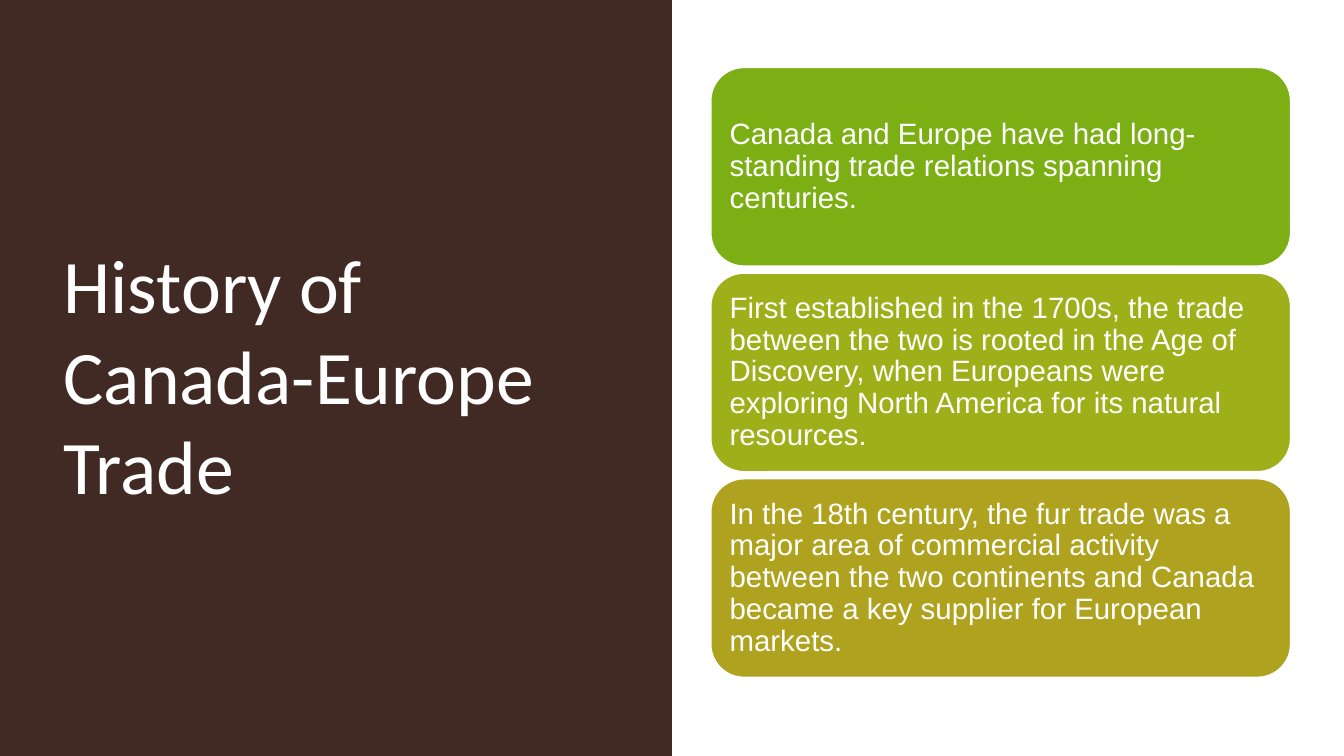
import pptx
import pptx.dml.color
import pptx.enum.shapes
import pptx.enum.text
import pptx.util

WIDTH, HEIGHT = pptx.util.Inches(13.33), pptx.util.Inches(7.5)
COLOURS = {"panel": "412A24", "text": "FFFFFF", "outline": "FFFFFF"}
MILESTONES = [
    ("7CAF13", "Canada and Europe have had long-standing trade relations spanning centuries."),
    ("9DAF19", "First established in the 1700s, the trade between the two is rooted in the "
               "Age of Discovery, when Europeans were exploring North America for its "
               "natural resources."),
    ("AFA21F", "In the 18th century, the fur trade was a major area of commercial activity "
               "between the two continents and Canada became a key supplier for European "
               "markets."),
]

# Column of cards, in inches
CARD_LEFT, CARD_TOP = 7.05, 0.67
CARD_WIDTH, CARD_HEIGHT = 5.75, 1.97
CARD_PITCH = 2.04


def rgb(colour):
    return pptx.dml.color.RGBColor.from_string(colour)


def add_block(slide, preset, left, top, width, height, fill):
    block = slide.shapes.add_shape(preset, left, top, width, height)
    block.shadow.inherit = False
    block.fill.solid()
    block.fill.fore_color.rgb = rgb(fill)
    block.line.fill.background()
    return block


def write_text(frame, text, font_name, size):
    frame.word_wrap = True
    frame.auto_size = pptx.enum.text.MSO_AUTO_SIZE.NONE
    frame.vertical_anchor = pptx.enum.text.MSO_ANCHOR.MIDDLE
    frame.text = text
    paragraph = frame.paragraphs[0]
    paragraph.alignment = pptx.enum.text.PP_ALIGN.LEFT
    paragraph.font.name = font_name
    paragraph.font.size = pptx.util.Pt(size)
    paragraph.font.color.rgb = rgb(COLOURS["text"])
    return paragraph


def add_title_panel(slide, text):
    panel = add_block(slide, pptx.enum.shapes.MSO_SHAPE.RECTANGLE,
                      0, 0, WIDTH // 2, HEIGHT, COLOURS["panel"])
    title = slide.shapes.title
    title.left = title.top = pptx.util.Inches(0.53)
    title.width, title.height = pptx.util.Inches(5.55), pptx.util.Inches(6.36)
    write_text(title.text_frame, text, "Calibri", 54)
    # Keep the panel behind the title
    title.element.addprevious(panel.element)


def add_card(slide, row, fill, text):
    card = add_block(slide, pptx.enum.shapes.MSO_SHAPE.ROUNDED_RECTANGLE,
                     pptx.util.Inches(CARD_LEFT),
                     pptx.util.Inches(CARD_TOP + row * CARD_PITCH),
                     pptx.util.Inches(CARD_WIDTH), pptx.util.Inches(CARD_HEIGHT), fill)
    card.line.color.rgb = rgb(COLOURS["outline"])
    card.line.width = pptx.util.Pt(1)
    frame = card.text_frame
    frame.margin_left = frame.margin_right = pptx.util.Inches(0.09)
    frame.margin_top = frame.margin_bottom = pptx.util.Inches(0.09)
    write_text(frame, text, "Arial", 21).line_spacing = 0.9


def main():
    deck = pptx.Presentation()
    deck.slide_width, deck.slide_height = WIDTH, HEIGHT
    slide = deck.slides.add_slide(deck.slide_layouts.get_by_name("Title Only"))

    # Left half: title
    add_title_panel(slide, "History of Canada-Europe Trade")

    # Right half: milestones
    for row, (fill, text) in enumerate(MILESTONES):
        add_card(slide, row, fill, text)

    deck.save("out.pptx")


if __name__ == "__main__":
    main()
